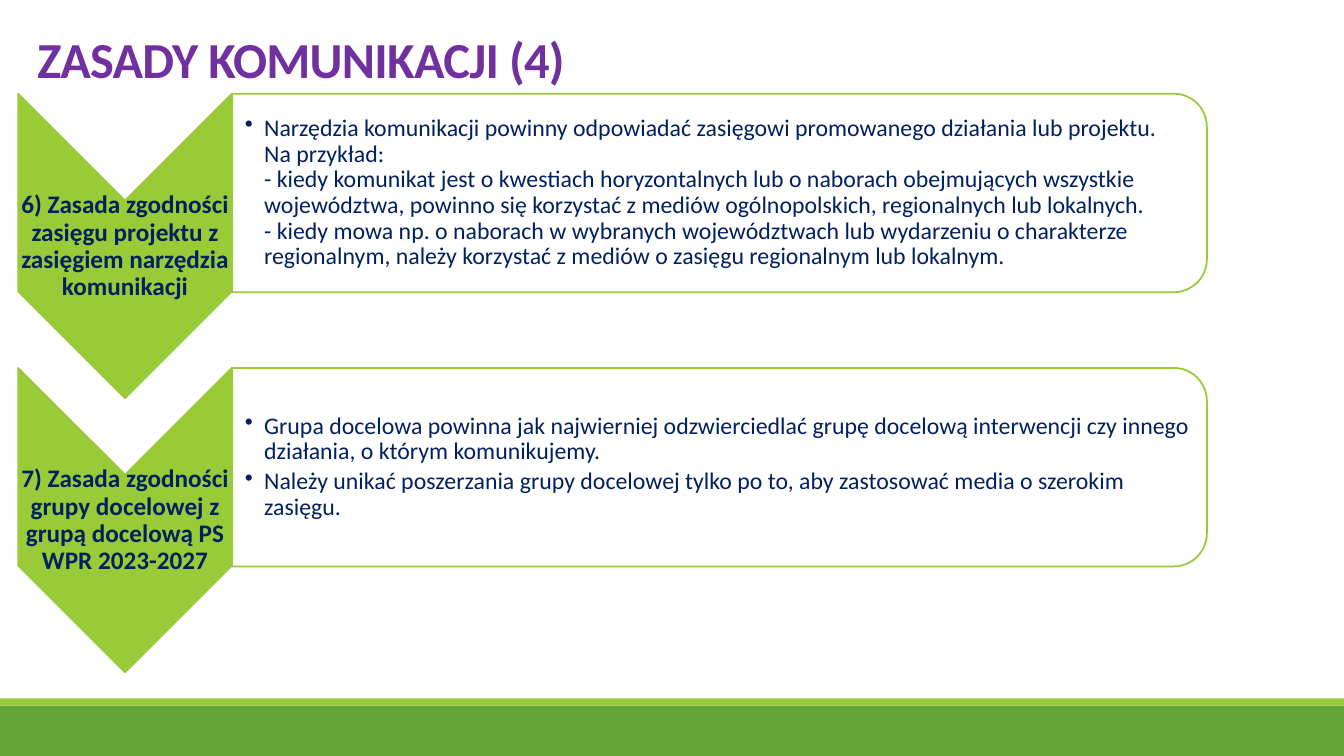
"""Build the slide with two communication principles."""
from dataclasses import dataclass

from lxml.etree import SubElement
from pptx import Presentation
from pptx.dml.color import RGBColor
from pptx.enum.shapes import MSO_SHAPE
from pptx.enum.text import MSO_ANCHOR, MSO_AUTO_SIZE, PP_ALIGN
from pptx.oxml.ns import qn
from pptx.shapes.autoshape import Shape
from pptx.slide import Slide
from pptx.text.text import _Paragraph as Paragraph
from pptx.util import Inches, Pt

WHITE = RGBColor(0xFF, 0xFF, 0xFF)
LIME = RGBColor(0x99, 0xCB, 0x38)
GREEN = RGBColor(0x63, 0xA5, 0x37)
PURPLE = RGBColor(0x70, 0x30, 0xA0)
NAVY = RGBColor(0x00, 0x20, 0x60)
FONT = "Calibri"
FIRST_TOP = 0.93
ROW_STEP = 2.72


@dataclass
class Frame:
    left: float
    top: float
    width: float
    height: float


@dataclass
class Principle:
    heading: str
    bullets: list[str]


PRINCIPLES = [
    Principle(
        "6) Zasada zgodności zasięgu projektu z zasięgiem narzędzia komunikacji",
        [
            "Narzędzia komunikacji powinny odpowiadać zasięgowi promowanego "
            "działania lub projektu.\n"
            "Na przykład:\n"
            "- kiedy komunikat jest o kwestiach horyzontalnych lub o naborach "
            "obejmujących wszystkie województwa, powinno się korzystać z mediów "
            "ogólnopolskich, regionalnych lub lokalnych.\n"
            "- kiedy mowa np. o naborach w wybranych województwach lub wydarzeniu "
            "o charakterze regionalnym, należy korzystać z mediów o zasięgu "
            "regionalnym lub lokalnym.",
        ],
    ),
    Principle(
        "7) Zasada zgodności grupy docelowej z grupą docelową PS WPR 2023-2027",
        [
            "Grupa docelowa powinna jak najwierniej odzwierciedlać grupę docelową "
            "interwencji czy innego działania, o którym komunikujemy.",
            "Należy unikać poszerzania grupy docelowej tylko po to, aby zastosować "
            "media o szerokim zasięgu.",
        ],
    ),
]


def add_band(page: Slide, frame: Frame, color: RGBColor) -> None:
    """Draw a plain footer band."""
    band = page.shapes.add_shape(
        MSO_SHAPE.RECTANGLE, Inches(frame.left), Inches(frame.top),
        Inches(frame.width), Inches(frame.height))
    band.shadow.inherit = False
    band.fill.solid()
    band.fill.fore_color.rgb = color
    band.line.fill.background()


def add_turned_shape(page: Slide, kind: MSO_SHAPE, frame: Frame, color: RGBColor) -> Shape:
    """Draw a shape turned by 90 degrees so that it covers the given frame."""
    shift = (frame.width - frame.height) / 2
    shape = page.shapes.add_shape(
        kind, Inches(frame.left + shift), Inches(frame.top - shift),
        Inches(frame.height), Inches(frame.width))
    shape.rotation = 90
    shape.shadow.inherit = False
    shape.fill.solid()
    shape.fill.fore_color.rgb = color
    shape.line.color.rgb = LIME
    shape.line.width = Pt(1.25)
    return shape


def format_paragraph(para: Paragraph, size: float, color: RGBColor, bold: bool,
                     spacing: float) -> None:
    """Set the line spacing of a paragraph and the font of its runs."""
    para.line_spacing = spacing
    for span in para.runs:
        span.font.name = FONT
        span.font.size = Pt(size)
        span.font.bold = bold
        span.font.color.rgb = color


def add_text_box(page: Slide, frame: Frame, text: str, inset: float) -> Shape:
    """Add a wrapping, vertically centred text box."""
    box = page.shapes.add_textbox(
        Inches(frame.left), Inches(frame.top), Inches(frame.width), Inches(frame.height))
    text_frame = box.text_frame
    text_frame.word_wrap = True
    text_frame.vertical_anchor = MSO_ANCHOR.MIDDLE
    text_frame.margin_left = Inches(inset)
    text_frame.margin_top = text_frame.margin_right = text_frame.margin_bottom = Inches(0.01)
    text_frame.text = text
    return box


def add_bullet(para: Paragraph) -> None:
    """Give a paragraph a hanging bullet."""
    properties = para._p.get_or_add_pPr()
    properties.set("marL", str(Inches(0.19)))
    properties.set("indent", str(-Inches(0.19)))
    SubElement(properties, qn("a:buChar")).set("char", "•")


def add_principle(page: Slide, principle: Principle, top: float) -> None:
    """Draw a chevron with its heading and the panel with its bullets."""
    add_turned_shape(page, MSO_SHAPE.CHEVRON, Frame(0.18, top, 2.12, 3.02), LIME)
    heading = add_text_box(page, Frame(0.18, top + 1.06, 2.12, 0.91), principle.heading, 0.01)
    para = heading.text_frame.paragraphs[0]
    para.alignment = PP_ALIGN.CENTER
    format_paragraph(para, 18, NAVY, True, 0.9)

    panel = add_turned_shape(
        page, MSO_SHAPE.ROUND_2_SAME_RECTANGLE, Frame(2.3, top, 9.67, 1.97), WHITE)
    color = panel.fill._xPr.find(qn("a:solidFill"))[0]
    SubElement(color, qn("a:alpha")).set("val", "90000")
    body = add_text_box(page, Frame(2.3, top + 0.1, 9.57, 1.77), "", 0.13)
    for index, bullet in enumerate(principle.bullets):
        para = body.text_frame.add_paragraph() if index else body.text_frame.paragraphs[0]
        para.text = bullet
        para.space_after = Pt(3)
        format_paragraph(para, 17, NAVY, False, 0.9)
        add_bullet(para)


def add_title(page: Slide, text: str) -> None:
    """Place and format the title placeholder."""
    title = page.shapes.title
    title.left, title.top = Inches(0.27), Inches(0.12)
    title.width, title.height = Inches(13.06), Inches(0.81)
    title.text_frame.text = text
    title.text_frame.auto_size = MSO_AUTO_SIZE.NONE
    title.text_frame.vertical_anchor = MSO_ANCHOR.BOTTOM
    para = title.text_frame.paragraphs[0]
    para.alignment = PP_ALIGN.LEFT
    format_paragraph(para, 36, PURPLE, True, 0.85)
    para.runs[0].font._element.set("spc", "-50")


def main() -> None:
    """Build and save the deck."""
    deck = Presentation()
    deck.slide_width, deck.slide_height = Inches(13.33), Inches(7.5)
    page = deck.slides.add_slide(deck.slide_layouts[5])
    add_band(page, Frame(0, 7, 13.33, 0.5), GREEN)
    add_band(page, Frame(0, 6.93, 13.33, 0.07), LIME)
    add_title(page, "ZASADY KOMUNIKACJI (4)")
    for row, principle in enumerate(PRINCIPLES):
        add_principle(page, principle, FIRST_TOP + row * ROW_STEP)
    deck.save("out.pptx")


if __name__ == "__main__":
    main()
